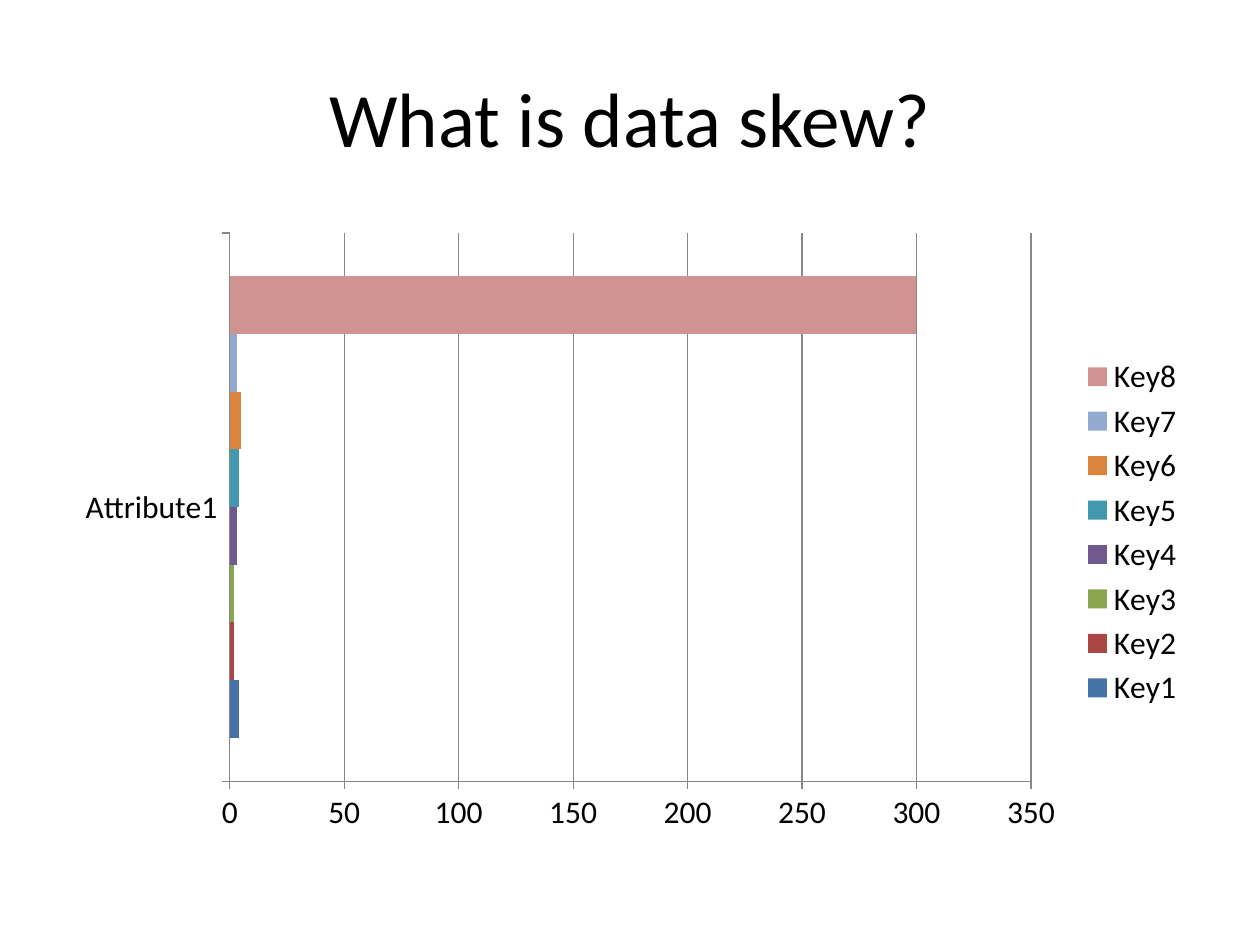
"""Build a slide that shows data skew with a clustered bar chart."""
from pptx import Presentation
from pptx.chart.data import CategoryChartData
from pptx.dml.color import RGBColor
from pptx.enum.chart import XL_CHART_TYPE, XL_LEGEND_POSITION, XL_TICK_MARK
from pptx.enum.text import MSO_ANCHOR, PP_ALIGN
from pptx.util import Inches, Pt

BAR_CLUSTERED = XL_CHART_TYPE.BAR_CLUSTERED
LEGEND_RIGHT = XL_LEGEND_POSITION.RIGHT
TICK_OUTSIDE = XL_TICK_MARK.OUTSIDE
TICK_NONE = XL_TICK_MARK.NONE
MIDDLE = MSO_ANCHOR.MIDDLE
CENTER = PP_ALIGN.CENTER

FONT = "Calibri"
BLACK = RGBColor(0x00, 0x00, 0x00)
GRAY = RGBColor(0x87, 0x87, 0x87)
WHITE = RGBColor(0xFF, 0xFF, 0xFF)
KEYS = [
    ("Key1", 4, RGBColor(0x45, 0x72, 0xA7)),
    ("Key2", 2, RGBColor(0xAA, 0x46, 0x43)),
    ("Key3", 2, RGBColor(0x89, 0xA5, 0x4E)),
    ("Key4", 3, RGBColor(0x71, 0x58, 0x8F)),
    ("Key5", 4, RGBColor(0x41, 0x98, 0xAF)),
    ("Key6", 5, RGBColor(0xDB, 0x84, 0x3D)),
    ("Key7", 3, RGBColor(0x93, 0xA9, 0xCF)),
    ("Key8", 300, RGBColor(0xD1, 0x93, 0x92)),
]

presentation = Presentation()
presentation.slide_width = Inches(10)
presentation.slide_height = Inches(7.5)
slide = presentation.slides.add_slide(presentation.slide_layouts[5])
slide.background.fill.solid()
slide.background.fill.fore_color.rgb = WHITE

title = slide.shapes.title
title.left, title.top = Inches(0.5), Inches(0.3)
title.width, title.height = Inches(9), Inches(1.25)
title.text_frame.vertical_anchor = MIDDLE
paragraph = title.text_frame.paragraphs[0]
paragraph.alignment = CENTER
run = paragraph.add_run()
run.text = "What is data skew?"
run.font.name = FONT
run.font.size = Pt(44)
run.font.color.rgb = BLACK

chart_data = CategoryChartData()
chart_data.categories = ["Attribute1"]
for name, value, color in KEYS:
    chart_data.add_series(name, [value])
chart = slide.shapes.add_chart(
    BAR_CLUSTERED, Inches(0.5), Inches(1.75), Inches(9), Inches(4.95), chart_data
).chart
chart.has_title = False
chart.font.name = FONT
chart.font.size = Pt(18)
chart.font.color.rgb = BLACK
chart.has_legend = True
chart.legend.position = LEGEND_RIGHT
chart.legend.include_in_layout = False

plot = chart.plots[0]
plot.gap_width = 150
plot.vary_by_categories = False
for series, (name, value, color) in zip(plot.series, KEYS):
    series.format.fill.solid()
    series.format.fill.fore_color.rgb = color

value_axis = chart.value_axis
value_axis.minimum_scale = 0
value_axis.maximum_scale = 350
value_axis.major_unit = 50
value_axis.has_major_gridlines = True
for axis in (chart.category_axis, value_axis):
    axis.major_tick_mark = TICK_OUTSIDE
    axis.minor_tick_mark = TICK_NONE
for line in (
    chart.category_axis.format.line,
    value_axis.format.line,
    value_axis.major_gridlines.format.line,
):
    line.color.rgb = GRAY
    line.width = Pt(0.75)

presentation.save("out.pptx")
